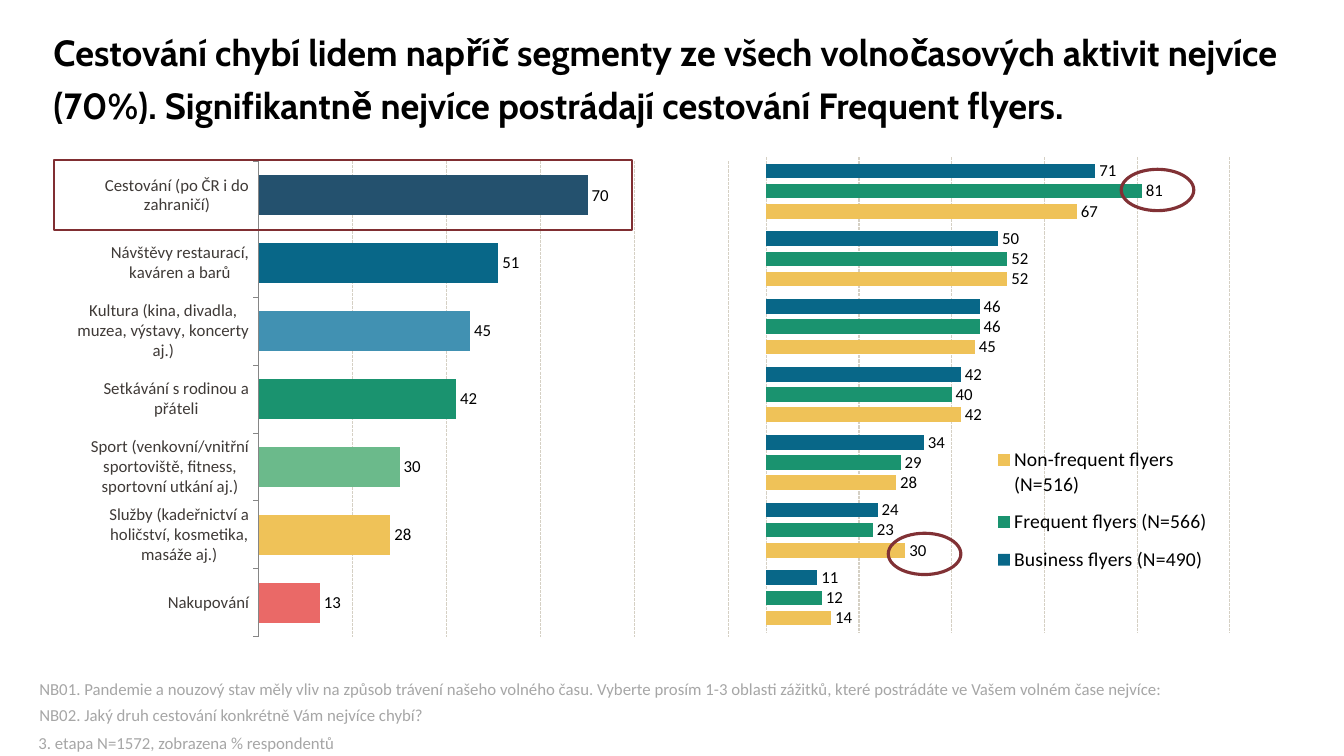
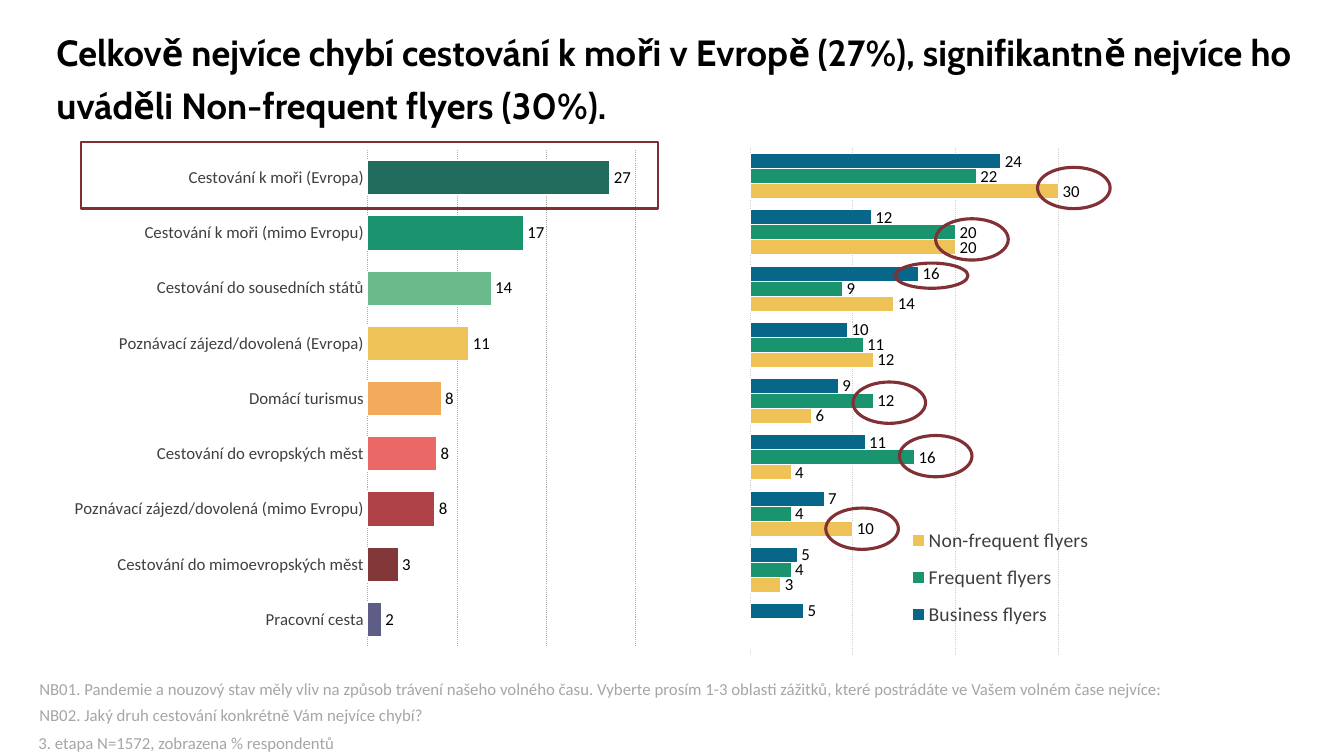
from dataclasses import dataclass
from typing import NamedTuple

from lxml import etree
from pptx import Presentation
from pptx.chart.chart import Chart
from pptx.chart.data import CategoryChartData
from pptx.dml.color import RGBColor
from pptx.enum.chart import XL_CHART_TYPE, XL_LABEL_POSITION, XL_LEGEND_POSITION, XL_TICK_MARK
from pptx.enum.dml import MSO_LINE
from pptx.enum.shapes import MSO_SHAPE
from pptx.enum.text import MSO_ANCHOR, MSO_AUTO_SIZE, PP_ALIGN
from pptx.oxml.ns import qn
from pptx.slide import Slide
from pptx.util import Pt

BAR_CLUSTERED = XL_CHART_TYPE.BAR_CLUSTERED
OUTSIDE_END = XL_LABEL_POSITION.OUTSIDE_END
LEGEND_RIGHT = XL_LEGEND_POSITION.RIGHT
TICK_NONE, TICK_OUTSIDE = XL_TICK_MARK.NONE, XL_TICK_MARK.OUTSIDE
SHORT_DASH, DOTTED = MSO_LINE.SQUARE_DOT, MSO_LINE.ROUND_DOT
ELLIPSE, RECTANGLE = MSO_SHAPE.OVAL, MSO_SHAPE.RECTANGLE
TOP, MIDDLE, BOTTOM = MSO_ANCHOR.TOP, MSO_ANCHOR.MIDDLE, MSO_ANCHOR.BOTTOM

EMU_PER_PX = 9144  # 100 px to the inch
TITLE_FONT, BODY_FONT = "Cabin", "Calibri"
BLACK, WHITE, NOTE_GREY, AXIS_GREY = "000000", "FFFFFF", "A6A6A6", "868686"
BLUE, GREEN, LIGHT_GREEN, YELLOW, CORAL = "086788", "1A936F", "6BBA8B", "EFC258", "EA6967"
FRAME_RED, CIRCLE_RED = "802E32", "813135"
SEGMENT_COLORS = (BLUE, GREEN, YELLOW)
WHOLE_NUMBER = "#,##0"
HIDE_ZERO = '[<0.5]"";#,##0;#,##0'
QUESTIONS = (
    "NB01. Pandemie a nouzový stav měly vliv na způsob trávení našeho volného času. "
    "Vyberte prosím 1-3 oblasti zážitků, které postrádáte ve Vašem volném čase nejvíce:",
    "NB02. Jaký druh cestování konkrétně Vám nejvíce chybí?",
)
SAMPLE = "3. etapa N=1572, zobrazena % respondentů"


class Box(NamedTuple):
    left: int
    top: int
    width: int
    height: int

    def emu(self) -> list[int]:
        return [value * EMU_PER_PX for value in self]


@dataclass(frozen=True)
class ChartStyle:
    maximum: int
    major_unit: int
    grid_dash: int
    number_format: str
    text_color: str
    legend_color: str
    bar_outline: str | None
    axis_line: str | None


@dataclass(frozen=True)
class BarChart:
    box: Box
    plot: Box
    categories: list[str]
    series: dict[str, list[float]]
    gap: int
    overlap: int
    grid_color: str
    point_colors: tuple[str, ...] = ()
    legend: Box | None = None


@dataclass(frozen=True)
class SurveySlide:
    title: str
    title_left: int
    style: ChartStyle
    charts: tuple[BarChart, ...]
    frame: Box
    circles: tuple[Box, ...]


def color(value: str) -> RGBColor:
    return RGBColor.from_string(value)


def circle(left: int, top: int, height: int = 41) -> Box:
    return Box(left, top, 72, height)


def numbered(count: int) -> list[str]:
    return [str(number) for number in range(1, count + 1)]


LEISURE_STYLE = ChartStyle(100, 20, SHORT_DASH, WHOLE_NUMBER, "3F3A37", BLACK, None, AXIS_GREY)
TRAVEL_STYLE = ChartStyle(35, 10, DOTTED, HIDE_ZERO, "3F3F3F", "3F3F3F", WHITE, None)

SURVEY_SLIDES = (
    SurveySlide(
        title="Cestování chybí lidem napříč segmenty ze všech volnočasových aktivit nejvíce (70%). "
              "Signifikantně nejvíce postrádají cestování Frequent flyers.",
        title_left=53,
        style=LEISURE_STYLE,
        charts=(
            BarChart(
                Box(580, 125, 642, 550), Box(760, 156, 460, 471), numbered(7),
                {"Business flyers (N=490)": [71, 50, 46, 42, 34, 24, 11],
                 "Frequent flyers (N=566)": [81, 52, 46, 40, 29, 23, 12],
                 "Non-frequent flyers (N=516)": [67, 52, 45, 42, 28, 30, 14]},
                gap=87, overlap=-37, grid_color="D5D0C4", legend=Box(981, 431, 225, 150),
            ),
            BarChart(
                Box(72, 143, 651, 551), Box(257, 160, 466, 472),
                ["Cestování (po ČR i do zahraničí)", "Návštěvy restaurací, kaváren a barů",
                 "Kultura (kina, divadla, muzea, výstavy, koncerty aj.)",
                 "Setkávání s rodinou a přáteli",
                 "Sport (venkovní/vnitřní sportoviště, fitness, sportovní utkání aj.)",
                 "Služby (kadeřnictví a holičství, kosmetika, masáže aj.)", "Nakupování"],
                {"Celkem": [70, 51, 45, 42, 30, 28, 13]},
                gap=70, overlap=-37, grid_color="D5D0C4",
                point_colors=("24516E", BLUE, "4191B2", GREEN, LIGHT_GREEN, YELLOW, CORAL),
            ),
        ),
        frame=Box(54, 159, 573, 69),
        circles=(circle(881, 529), circle(1112, 168)),
    ),
    SurveySlide(
        title="Celkově nejvíce chybí cestování k moři v Evropě (27%), signifikantně nejvíce ho "
              "uváděli Non-frequent flyers (30%).",
        title_left=56,
        style=TRAVEL_STYLE,
        charts=(
            BarChart(
                Box(366, 123, 735, 554), Box(744, 147, 357, 502), numbered(9),
                {"Business flyers": [24.4, 11.8, 16.4, 9.5, 8.6, 11.2, 7.2, 4.6, 5.2],
                 "Frequent flyers": [22, 20, 9, 11, 12, 16, 4, 4, 0],
                 "Non-frequent flyers": [30, 20, 14, 12, 6, 4, 10, 3, 0]},
                gap=75, overlap=0, grid_color="D0CECE", legend=Box(895, 512, 195, 122),
            ),
            BarChart(
                Box(38, 125, 637, 544), Box(365, 149, 310, 493),
                ["Cestování k moři (Evropa)", "Cestování k moři (mimo Evropu)",
                 "Cestování do sousedních států", "Poznávací zájezd/dovolená (Evropa)",
                 "Domácí turismus", "Cestování do evropských měst",
                 "Poznávací zájezd/dovolená (mimo Evropu)",
                 "Cestování do mimoevropských měst", "Pracovní cesta"],
                {"Celkem": [27.1, 17.4, 13.8, 11.3, 8.2, 7.7, 7.5, 3.4, 1.5]},
                gap=62, overlap=-44, grid_color="AFABAB",
                point_colors=("226C5E", GREEN, LIGHT_GREEN, YELLOW, "F2AA5D", CORAL,
                              "AF4248", "823838", "5E5D85"),
            ),
        ),
        frame=Box(80, 141, 573, 66),
        circles=(circle(888, 261, 25), circle(846, 379), circle(819, 504),
                 circle(928, 217), circle(1029, 166), circle(892, 432)),
    ),
)


def format_font(font, name: str, size: int, hex_color: str, bold: bool = False) -> None:
    font.name, font.size, font.bold = name, Pt(size), bold
    font.color.rgb = color(hex_color)


def format_frame(text_frame, anchor: MSO_ANCHOR, top_margin: int = 0) -> None:
    text_frame.word_wrap = True
    text_frame.auto_size = MSO_AUTO_SIZE.NONE
    text_frame.vertical_anchor = anchor
    text_frame.margin_left = text_frame.margin_right = text_frame.margin_bottom = 0
    text_frame.margin_top = top_margin * EMU_PER_PX


def add_title(slide: Slide, text: str, left: int) -> None:
    title = slide.shapes.title
    title.left, title.top, title.width, title.height = Box(left, 1, 1260, 145).emu()
    format_frame(title.text_frame, MIDDLE)
    title.text_frame.text = text
    paragraph = title.text_frame.paragraphs[0]
    paragraph.alignment = PP_ALIGN.LEFT
    paragraph.line_spacing = 1.2
    format_font(paragraph.font, TITLE_FONT, 26, BLACK, bold=True)


def add_note(slide: Slide, box: Box, lines: tuple[str, ...], anchor: MSO_ANCHOR,
             line_spacing: float | Pt) -> None:
    text_frame = slide.shapes.add_textbox(*box.emu()).text_frame
    format_frame(text_frame, anchor, top_margin=4)
    for index, line in enumerate(lines):
        paragraph = text_frame.paragraphs[0] if index == 0 else text_frame.add_paragraph()
        paragraph.text = line
        paragraph.line_spacing = line_spacing
        if index:
            paragraph.space_before = Pt(10)
        format_font(paragraph.font, BODY_FONT, 12, NOTE_GREY)


def add_outline(slide: Slide, preset: MSO_SHAPE, box: Box, hex_color: str, width: float) -> None:
    shape = slide.shapes.add_shape(preset, *box.emu())
    shape.shadow.inherit = False
    shape.fill.background()
    shape.line.color.rgb = color(hex_color)
    shape.line.width = Pt(width)


def place_part(part, index: int, box: Box, chart_box: Box, inner: bool = False) -> None:
    """Give a plot area or legend a manual layout, as fractions of the chart."""
    for old_layout in part.findall(qn("c:layout")):
        part.remove(old_layout)
    layout = etree.Element(qn("c:layout"))
    manual = etree.SubElement(layout, qn("c:manualLayout"))
    settings = {"layoutTarget": "inner"} if inner else {}
    settings |= {
        "xMode": "edge", "yMode": "edge",
        "x": (box.left - chart_box.left) / chart_box.width,
        "y": (box.top - chart_box.top) / chart_box.height,
        "w": box.width / chart_box.width,
        "h": box.height / chart_box.height,
    }
    for tag, value in settings.items():
        etree.SubElement(manual, qn(f"c:{tag}")).set("val", str(value))
    part.insert(index, layout)


def clear_background(chart: Chart) -> None:
    properties = etree.Element(qn("c:spPr"))
    etree.SubElement(properties, qn("a:noFill"))
    line = etree.SubElement(properties, qn("a:ln"))
    etree.SubElement(line, qn("a:noFill"))
    chart.element.find(qn("c:chart")).addnext(properties)


def format_bar(bar_format, hex_color: str, outline: str | None) -> None:
    bar_format.fill.solid()
    bar_format.fill.fore_color.rgb = color(hex_color)
    if outline:
        bar_format.line.color.rgb = color(outline)
        bar_format.line.width = Pt(0.75)
    else:
        bar_format.line.fill.background()


def format_axes(chart: Chart, spec: BarChart, style: ChartStyle) -> None:
    value_axis, category_axis = chart.value_axis, chart.category_axis
    value_axis.minimum_scale, value_axis.maximum_scale = 0, style.maximum
    value_axis.major_unit = style.major_unit
    value_axis.visible = False
    grid_line = value_axis.major_gridlines.format.line
    grid_line.color.rgb = color(spec.grid_color)
    grid_line.width = Pt(0.75)
    grid_line.dash_style = style.grid_dash

    category_axis.reverse_order = True
    category_axis.visible = spec.legend is None
    category_axis.major_tick_mark = TICK_OUTSIDE if style.axis_line else TICK_NONE
    format_font(category_axis.tick_labels.font, BODY_FONT, 12, style.text_color)
    if style.axis_line:
        category_axis.format.line.color.rgb = color(style.axis_line)
    else:
        category_axis.format.line.fill.background()


def add_bar_chart(slide: Slide, spec: BarChart, style: ChartStyle) -> None:
    data = CategoryChartData()
    data.categories = spec.categories
    for name, values in spec.series.items():
        data.add_series(name, values)
    chart = slide.shapes.add_chart(BAR_CLUSTERED, *spec.box.emu(), data).chart
    clear_background(chart)
    format_font(chart.font, BODY_FONT, 12, BLACK)
    chart.has_title = False
    format_axes(chart, spec, style)

    plot = chart.plots[0]
    plot.gap_width, plot.overlap = spec.gap, spec.overlap
    plot.vary_by_categories = False
    for series, hex_color in zip(plot.series, SEGMENT_COLORS):
        series.invert_if_negative = False
        format_bar(series.format, hex_color, style.bar_outline)
        for index, point_color in enumerate(spec.point_colors):
            format_bar(series.points[index].format, point_color, style.bar_outline)
        labels = series.data_labels
        labels.show_value = True
        labels.position = OUTSIDE_END
        labels.number_format, labels.number_format_is_linked = style.number_format, False
        format_font(labels.font, BODY_FONT, 12, BLACK)

    chart_element = chart.element.find(qn("c:chart"))
    place_part(chart_element.find(qn("c:plotArea")), 0, spec.plot, spec.box, inner=True)
    chart.has_legend = spec.legend is not None
    if spec.legend:
        chart.legend.position = LEGEND_RIGHT
        chart.legend.include_in_layout = False
        format_font(chart.legend.font, BODY_FONT, 14, style.legend_color)
        place_part(chart_element.find(qn("c:legend")), 1, spec.legend, spec.box)


def main() -> None:
    presentation = Presentation()
    presentation.slide_width, presentation.slide_height = Box(0, 0, 1333, 750).emu()[2:]
    title_only = presentation.slide_layouts[5]
    for survey in SURVEY_SLIDES:
        slide = presentation.slides.add_slide(title_only)
        add_title(slide, survey.title, survey.title_left)
        for spec in survey.charts:
            add_bar_chart(slide, spec, survey.style)
        add_note(slide, Box(39, 676, 1240, 43), QUESTIONS, BOTTOM, Pt(8.4))
        add_note(slide, Box(38, 725, 1249, 24), (SAMPLE,), TOP, 0.9)
        for box in survey.circles:
            add_outline(slide, ELLIPSE, box, CIRCLE_RED, 2.25)
        add_outline(slide, RECTANGLE, survey.frame, FRAME_RED, 1.5)
    presentation.save("out.pptx")


if __name__ == "__main__":
    main()
